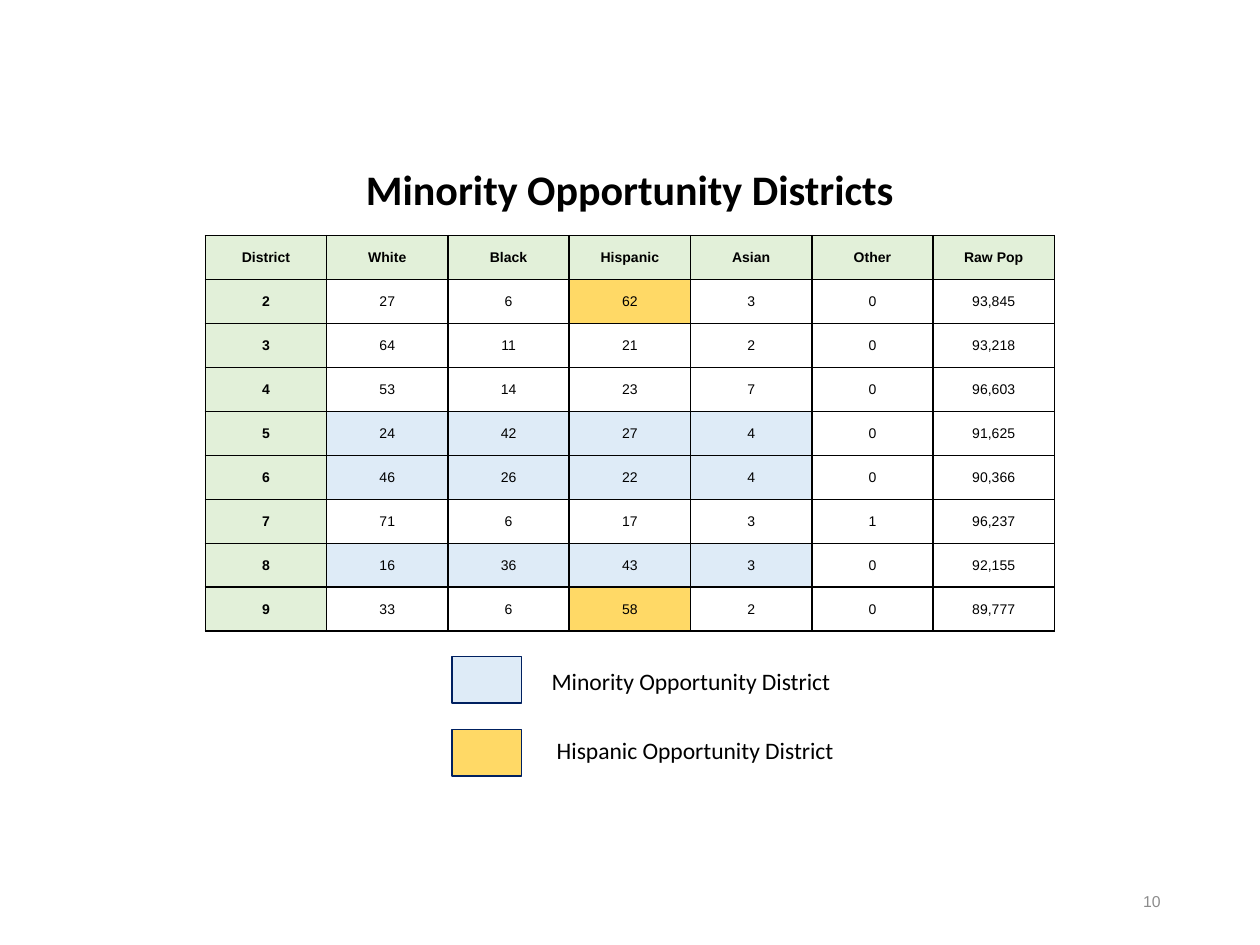
from lxml.etree import SubElement
from pptx import Presentation
from pptx.dml.color import RGBColor
from pptx.enum.shapes import MSO_SHAPE
from pptx.enum.text import MSO_ANCHOR, MSO_AUTO_SIZE, PP_ALIGN
from pptx.oxml.ns import qn
from pptx.util import Inches, Pt

COLOURS = {
    "text": "000000",
    "border": "000000",
    "page_number": "8C8C8C",
    "heading": "E2F0D9",
    "minority": "DEEBF7",
    "hispanic": "FFD966",
    "swatch_line": "002060",
}
HEADINGS = ["District", "White", "Black", "Hispanic", "Asian", "Other", "Raw Pop"]
DISTRICTS = [
    ["2", "27", "6", "62", "3", "0", "93,845"],
    ["3", "64", "11", "21", "2", "0", "93,218"],
    ["4", "53", "14", "23", "7", "0", "96,603"],
    ["5", "24", "42", "27", "4", "0", "91,625"],
    ["6", "46", "26", "22", "4", "0", "90,366"],
    ["7", "71", "6", "17", "3", "1", "96,237"],
    ["8", "16", "36", "43", "3", "0", "92,155"],
    ["9", "33", "6", "58", "2", "0", "89,777"],
]
MINORITY_DISTRICTS = {"5", "6", "8"}
HISPANIC_DISTRICTS = {"2", "9"}
# Fill, label, swatch top, label left, label top
LEGEND = [
    ("minority", "Minority Opportunity District", 5.21, 4.28, 5.24),
    ("hispanic", "Hispanic Opportunity District", 5.79, 4.32, 5.79),
]


def colour(name):
    return RGBColor.from_string(COLOURS[name])


def write(frame, text, size, font="Arial", ink="text", bold=False, align=PP_ALIGN.LEFT):
    frame.vertical_anchor = MSO_ANCHOR.MIDDLE
    paragraph = frame.paragraphs[0]
    paragraph.alignment = align
    run = paragraph.add_run()
    run.text = text
    for name, value in {"name": font, "size": Pt(size), "bold": bold}.items():
        setattr(run.font, name, value)
    run.font.color.rgb = colour(ink)
    return paragraph


def add_title(slide):
    title = slide.shapes.title
    title.left, title.top = Inches(0.69), Inches(1.28)
    title.width, title.height = Inches(8.62), Inches(0.48)
    title.text_frame.auto_size = MSO_AUTO_SIZE.NONE
    heading = write(title.text_frame, "Minority Opportunity Districts", 24,
                    font="Calibri", bold=True, align=PP_ALIGN.CENTER)
    heading.line_spacing = 0.9


def add_label(slide, text, left, top, width, height, size, **style):
    box = slide.shapes.add_textbox(Inches(left), Inches(top), Inches(width), Inches(height))
    box.text_frame.word_wrap = True
    write(box.text_frame, text, size, **style)


def cell_fill(row, column, district):
    """Name the colour of a cell, or None where it is left clear."""
    if row == 0 or column == 0:
        return "heading"
    if district in MINORITY_DISTRICTS and column <= HEADINGS.index("Asian"):
        return "minority"
    if district in HISPANIC_DISTRICTS and column == HEADINGS.index("Hispanic"):
        return "hispanic"
    return None


def add_borders(cell):
    properties = cell._tc.get_or_add_tcPr()
    for position, side in enumerate(("lnL", "lnR", "lnT", "lnB")):
        line = SubElement(properties, qn(f"a:{side}"), w=str(Pt(1)))
        solid = SubElement(line, qn("a:solidFill"))
        SubElement(solid, qn("a:srgbClr"), val=COLOURS["border"])
        properties.insert(position, line)


def add_district_table(slide):
    rows = [HEADINGS] + DISTRICTS
    table = slide.shapes.add_table(
        len(rows), len(HEADINGS), Inches(1.63), Inches(1.87), Inches(6.74), Inches(3.14)
    ).table
    table.horz_banding = False
    for r, values in enumerate(rows):
        for c, value in enumerate(values):
            cell = table.cell(r, c)
            cell.margin_left = cell.margin_right = Inches(0.06)
            cell.margin_top = cell.margin_bottom = 0
            cell.vertical_anchor = MSO_ANCHOR.MIDDLE
            write(cell.text_frame, value, 8, bold=r == 0 or c == 0, align=PP_ALIGN.CENTER)
            fill = cell_fill(r, c, values[0])
            if fill:
                cell.fill.solid()
                cell.fill.fore_color.rgb = colour(fill)
            else:
                cell.fill.background()
            add_borders(cell)


def add_swatch(slide, fill, top):
    swatch = slide.shapes.add_shape(
        MSO_SHAPE.RECTANGLE, Inches(3.59), Inches(top), Inches(0.55), Inches(0.37))
    swatch.shadow.inherit = False
    swatch.fill.solid()
    swatch.fill.fore_color.rgb = colour(fill)
    swatch.line.color.rgb = colour("swatch_line")
    swatch.line.width = Pt(1)


def main():
    deck = Presentation()
    deck.slide_width, deck.slide_height = Inches(10), Inches(7.5)
    slide = deck.slides.add_slide(deck.slide_layouts[5])
    add_title(slide)
    add_label(slide, "10", 7.06, 6.95, 2.25, 0.4, 9, ink="page_number", align=PP_ALIGN.RIGHT)
    add_district_table(slide)
    for fill, label, swatch_top, label_left, label_top in LEGEND:
        add_swatch(slide, fill, swatch_top)
        add_label(slide, label, label_left, label_top, 2.59, 0.33, 13.5, font="Calibri")
    deck.save("out.pptx")


if __name__ == "__main__":
    main()
